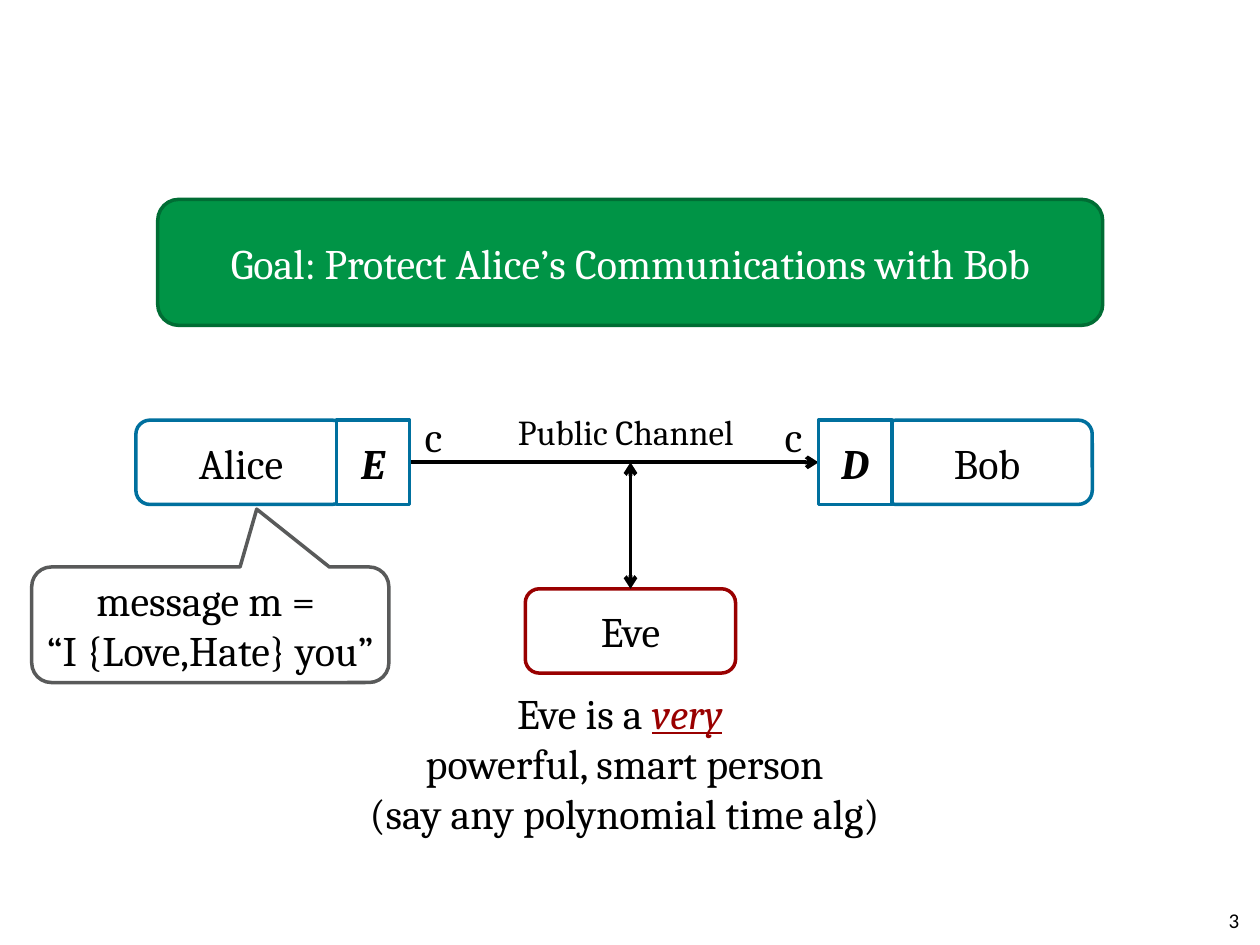
from lxml import etree
from pptx import Presentation
from pptx import util as u
from pptx.dml.color import RGBColor
from pptx.enum import shapes, text
from pptx.oxml import ns

BLACK = RGBColor(0x00, 0x00, 0x00)
WHITE = RGBColor(0xFF, 0xFF, 0xFF)
BLUE = RGBColor(0x00, 0x70, 0x9E)
RED = RGBColor(0x99, 0x00, 0x00)
GREY = RGBColor(0x59, 0x5A, 0x5A)
GREEN = RGBColor(0x00, 0x94, 0x46)
DARK_GREEN = RGBColor(0x00, 0x6D, 0x34)

ROUNDED = shapes.MSO_SHAPE.ROUNDED_RECTANGLE
CENTER = text.PP_ALIGN.CENTER
BODY = {"name": "Cambria", "size": u.Pt(24)}
LETTER = {**BODY, "bold": True, "italic": True}
STRESS = {**BODY, "italic": True, "underline": True}
ACTOR_WIDTH, ACTOR_HEIGHT = 4.24, 1.7


def set_values(target, values):
    """Set every attribute named in values on target."""
    for key, value in values.items():
        setattr(target, key, value)


def write(frame, runs, align, **frame_values):
    """Write (wording, font values, colour) runs as one paragraph."""
    margins = dict.fromkeys(("margin_left", "margin_top", "margin_right", "margin_bottom"), 0)
    set_values(frame, {**margins, **frame_values})
    paragraph = frame.paragraphs[0]
    paragraph.alignment = align
    for wording, font_values, colour in runs:
        for index, part in enumerate(wording.split("\n")):
            if index:
                paragraph.add_line_break()
            if part:
                run = paragraph.add_run()
                run.text = part
                set_values(run.font, font_values)
                run.font.color.rgb = colour


def add_label(slide, box, runs, align=text.PP_ALIGN.LEFT, **frame_values):
    """Add unwrapped text in a box given in centimetres."""
    label = slide.shapes.add_textbox(*map(u.Cm, box))
    write(label.text_frame, runs, align, **{"word_wrap": False, **frame_values})


def add_panel(slide, preset, box, wording, outline, fill=WHITE, font=BODY, ink=BLACK):
    """Add an outlined shape with centred text and return it."""
    panel = slide.shapes.add_shape(preset, *map(u.Cm, box))
    panel.shadow.inherit = False
    panel.fill.solid()
    panel.fill.fore_color.rgb = fill
    panel.line.color.rgb = outline
    panel.line.width = u.Pt(2)
    write(panel.text_frame, [(wording, font, ink)], CENTER,
          word_wrap=True, vertical_anchor=text.MSO_ANCHOR.MIDDLE)
    return panel


def add_arrow(slide, start, end, heads):
    """Add a black connector with arrowheads at the listed ends."""
    arrow = slide.shapes.add_connector(
        shapes.MSO_CONNECTOR.STRAIGHT, *map(u.Cm, (*start, *end)))
    arrow.line.color.rgb = BLACK
    arrow.line.width = u.Pt(2.25)
    outline = arrow.line._get_or_add_ln()
    for head in heads:
        etree.SubElement(outline, ns.qn(f"a:{head}"), type="arrow")
    etree.SubElement(arrow._element.spPr, ns.qn("a:effectLst"))


def add_goal(slide, box):
    """Add the green banner with the goal."""
    add_panel(slide, ROUNDED, box, "Goal: Protect Alice’s Communications with Bob",
              DARK_GREEN, fill=GREEN, ink=WHITE)


def add_channel(slide, box):
    """Add Alice and Bob at the two ends, mirrored, with the channel between."""
    left, top, width, height = box
    coder_offset, coder_width = 4.04, 1.48
    cipher_offset, cipher_width = 5.82, 0.38
    actor_top = top + height - ACTOR_HEIGHT
    wire_y = actor_top + ACTOR_HEIGHT / 2

    def mirrored(offset, size):
        return left + offset, left + width - offset - size

    for x, actor in zip(mirrored(0, ACTOR_WIDTH), ("Alice", "Bob")):
        add_panel(slide, ROUNDED, (x, actor_top, ACTOR_WIDTH, ACTOR_HEIGHT), actor, BLUE)
    wire_start, wire_end = mirrored(coder_offset + coder_width, 0)
    add_arrow(slide, (wire_start, wire_y), (wire_end, wire_y), ["tailEnd"])
    for x, coder in zip(mirrored(coder_offset, coder_width), ("E", "D")):
        add_panel(slide, shapes.MSO_SHAPE.RECTANGLE,
                  (x, actor_top, coder_width, ACTOR_HEIGHT), coder, BLUE, font=LETTER)
    for x in mirrored(cipher_offset, cipher_width):
        add_label(slide, (x, top, cipher_width, 1.02), [("c", BODY, BLACK)])
    add_label(slide, (left + 7.7, top, 4.52, 0.86),
              [("Public Channel", {**BODY, "size": u.Pt(20)}, BLACK)])


def add_message(slide, box):
    """Add the callout with Alice's message."""
    callout = add_panel(slide, shapes.MSO_SHAPE.ROUNDED_RECTANGULAR_CALLOUT, box,
                        "message m = \n“I {Love,Hate} you”", GREY)
    for index, value in enumerate((0.13, -1, 0.17)):
        callout.adjustments[index] = value


def add_eve(slide, box):
    """Add Eve, her tap on the channel and her description."""
    left, top, width, height = box
    eve_left, eve_top, description_top = left + 3.4, top + 2.55, top + 4.53
    tap_x = eve_left + ACTOR_WIDTH / 2
    add_panel(slide, ROUNDED, (eve_left, eve_top, ACTOR_WIDTH, ACTOR_HEIGHT), "Eve", RED)
    add_arrow(slide, (tap_x, eve_top), (tap_x, top), ["headEnd", "tailEnd"])
    add_label(slide, (left, description_top, width, top + height - description_top),
              [("Eve is a ", BODY, BLACK), ("very", STRESS, RED),
               (" \npowerful, smart person\n(say any polynomial time alg)", BODY, BLACK)],
              CENTER)


def add_page_number(slide, box):
    """Add the page number at the bottom right."""
    add_label(slide, box, [("3", {"name": "Calibri", "size": u.Pt(12)}, BLACK)],
              text.PP_ALIGN.RIGHT, word_wrap=True, vertical_anchor=text.MSO_ANCHOR.MIDDLE)


def main():
    """Build and save the slide."""
    deck = Presentation()
    set_values(deck, {"slide_width": u.Cm(25.4), "slide_height": u.Cm(19.05)})
    slide = deck.slides.add_slide(deck.slide_layouts.get_by_name("Blank"))
    add_goal(slide, (3.18, 4.02, 19.05, 2.54))
    add_channel(slide, (2.74, 8.28, 19.28, 1.89))
    add_message(slide, (0.64, 11.43, 7.2, 2.33))
    add_eve(slide, (7.19, 9.32, 10.8, 7.6))
    add_page_number(slide, (19.05, 18.03, 5.93, 1.02))
    deck.save("out.pptx")


if __name__ == "__main__":
    main()
